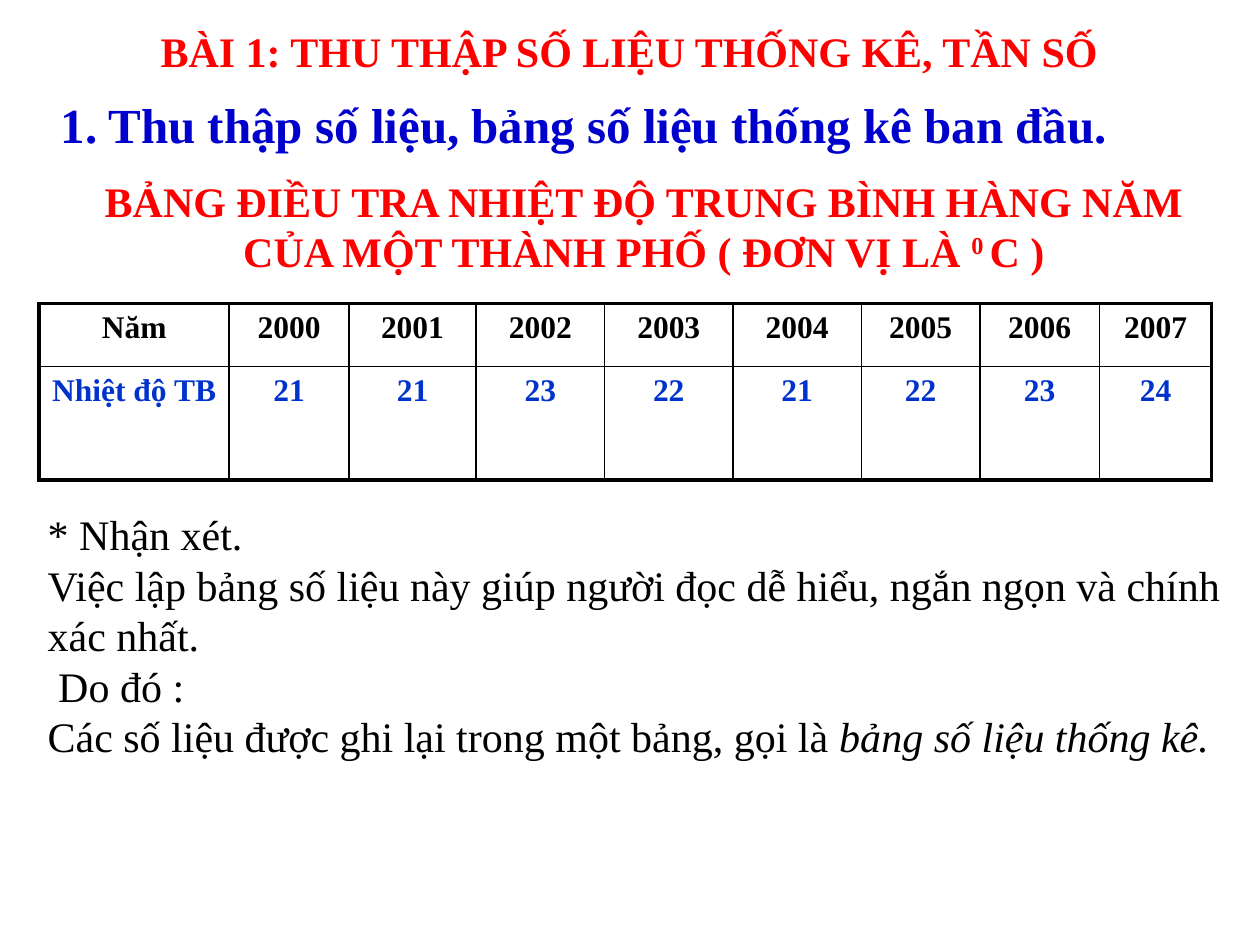
from dataclasses import dataclass

from lxml import etree
from pptx import Presentation
from pptx import util as u
from pptx.dml import color
from pptx.enum import text
from pptx.oxml import ns

FONT = "Times New Roman"
BLACK, RED, NAVY, BLUE = "000000", "FF0000", "0000CC", "0033CC"
THIN, THICK = 1, 2.25
CENTER, LEFT = text.PP_ALIGN.CENTER, text.PP_ALIGN.LEFT


@dataclass
class Area:
    left: float
    top: float
    width: float
    height: float

    def lengths(self) -> list:
        return [u.Pt(n) for n in (self.left, self.top, self.width, self.height)]


@dataclass
class TableRow:
    label: str
    values: list
    height: float
    tint: str


TITLE = Area(19.4, 3.6, 680.4, 50.4)
HEADING = Area(20.2, 54, 648, 41.8)
CAPTION = Area(43.9, 100.1, 648, 58.3)
TABLE = Area(22.3, 173.5, 669.6, 100.8)
REMARKS = Area(20.2, 287.3, 686.2, 152.6)
COLUMNS = [108.7, 68.4, 72.7, 73.4, 73.4, 73.4, 67.7, 68.4, 64.1]
ROWS = [
    TableRow("Năm", list(range(2000, 2008)), 36, BLACK),
    TableRow("Nhiệt độ TB", [21, 21, 23, 22, 21, 22, 23, 24], 64.8, BLUE),
]


def rgb(value: str) -> color.RGBColor:
    return color.RGBColor.from_string(value)


def write(para, words: str, *, size=24, tint=BLACK, bold=False,
          italic=False, raised=0, align=None) -> None:
    span = para.add_run()
    span.text = words
    font = span.font
    font.name, font.size = FONT, u.Pt(size)
    font.bold, font.italic = bold, italic
    font.color.rgb = rgb(tint)
    if raised:
        font._element.set("baseline", str(raised * 1000))
    if align is not None:
        para.alignment = align


def place(box, area: Area) -> None:
    box.left, box.top, box.width, box.height = area.lengths()
    box.text_frame.auto_size = text.MSO_AUTO_SIZE.NONE


def add_box(page, area: Area):
    frame = page.shapes.add_textbox(*area.lengths()).text_frame
    frame.word_wrap = True
    frame.auto_size = text.MSO_AUTO_SIZE.SHAPE_TO_FIT_TEXT
    return frame


def add_border(cell, side: str, width: float) -> None:
    props = cell._tc.get_or_add_tcPr()
    line = etree.SubElement(props, ns.qn(f"a:ln{side}"), w=str(u.Pt(width)))
    fill = etree.SubElement(line, ns.qn("a:solidFill"))
    etree.SubElement(fill, ns.qn("a:srgbClr"), val=BLACK)


def add_title(page) -> None:
    box = page.shapes.title
    place(box, TITLE)
    box.text_frame.vertical_anchor = text.MSO_ANCHOR.MIDDLE
    write(box.text_frame.paragraphs[0], "BÀI 1: THU THẬP SỐ LIỆU THỐNG KÊ, TẦN SỐ",
          tint=RED, bold=True, align=CENTER)


def add_heading(page) -> None:
    box = page.placeholders[1]
    place(box, HEADING)
    para = box.text_frame.paragraphs[0]
    para.line_spacing = 0.9
    para.space_before, para.space_after = u.Pt(12), u.Pt(2)
    props = para._p.get_or_add_pPr()
    props.set("marL", str(u.Pt(7.2)))
    props.set("indent", "0")
    etree.SubElement(props, ns.qn("a:buNone"))
    write(para, "1. Thu thập số liệu, bảng số liệu thống kê ban đầu.",
          size=28, tint=NAVY, bold=True, align=LEFT)


def add_caption(page) -> None:
    frame = add_box(page, CAPTION)
    frame.margin_left = frame.margin_right = 0
    frame.margin_top = frame.margin_bottom = 0
    para = frame.paragraphs[0]
    for words, raised in (
        ("BẢNG ĐIỀU TRA NHIỆT ĐỘ TRUNG BÌNH HÀNG NĂM CỦA MỘT THÀNH PHỐ ( ĐƠN VỊ LÀ ", 0),
        ("0 ", 30),
        ("C )", 0),
    ):
        write(para, words, tint=RED, bold=True, raised=raised, align=CENTER)


def add_temperatures(page) -> None:
    table = page.shapes.add_table(len(ROWS), len(COLUMNS), *TABLE.lengths()).table
    table.first_row = table.horz_banding = False
    for column, width in zip(table.columns, COLUMNS):
        column.width = u.Pt(width)
    last_row, last_column = len(ROWS) - 1, len(COLUMNS) - 1
    for i, row in enumerate(ROWS):
        table.rows[i].height = u.Pt(row.height)
        for j, value in enumerate([row.label, *row.values]):
            cell = table.cell(i, j)
            outer = {"L": j == 0, "R": j == last_column, "T": i == 0, "B": i == last_row}
            for side, thick in outer.items():
                add_border(cell, side, THICK if thick else THIN)
            cell.fill.background()
            write(cell.text_frame.paragraphs[0], str(value),
                  size=18, tint=row.tint, bold=True, align=CENTER)


def add_remarks(page) -> None:
    frame = add_box(page, REMARKS)
    lines = [
        "* Nhận xét.",
        "Việc lập bảng số liệu này giúp người đọc dễ hiểu, ngắn ngọn và chính xác nhất.",
        " Do đó :",
        "Các số liệu được ghi lại trong một bảng, gọi là ",
    ]
    for i, words in enumerate(lines):
        para = frame.add_paragraph() if i else frame.paragraphs[0]
        write(para, words)
    write(para, "bảng số liệu thống kê.", italic=True)


def main() -> None:
    deck = Presentation()
    deck.slide_width, deck.slide_height = u.Pt(720), u.Pt(540)
    page = deck.slides.add_slide(deck.slide_layouts[1])
    add_caption(page)
    add_temperatures(page)
    add_remarks(page)
    add_title(page)
    add_heading(page)
    deck.save("out.pptx")


if __name__ == "__main__":
    main()
